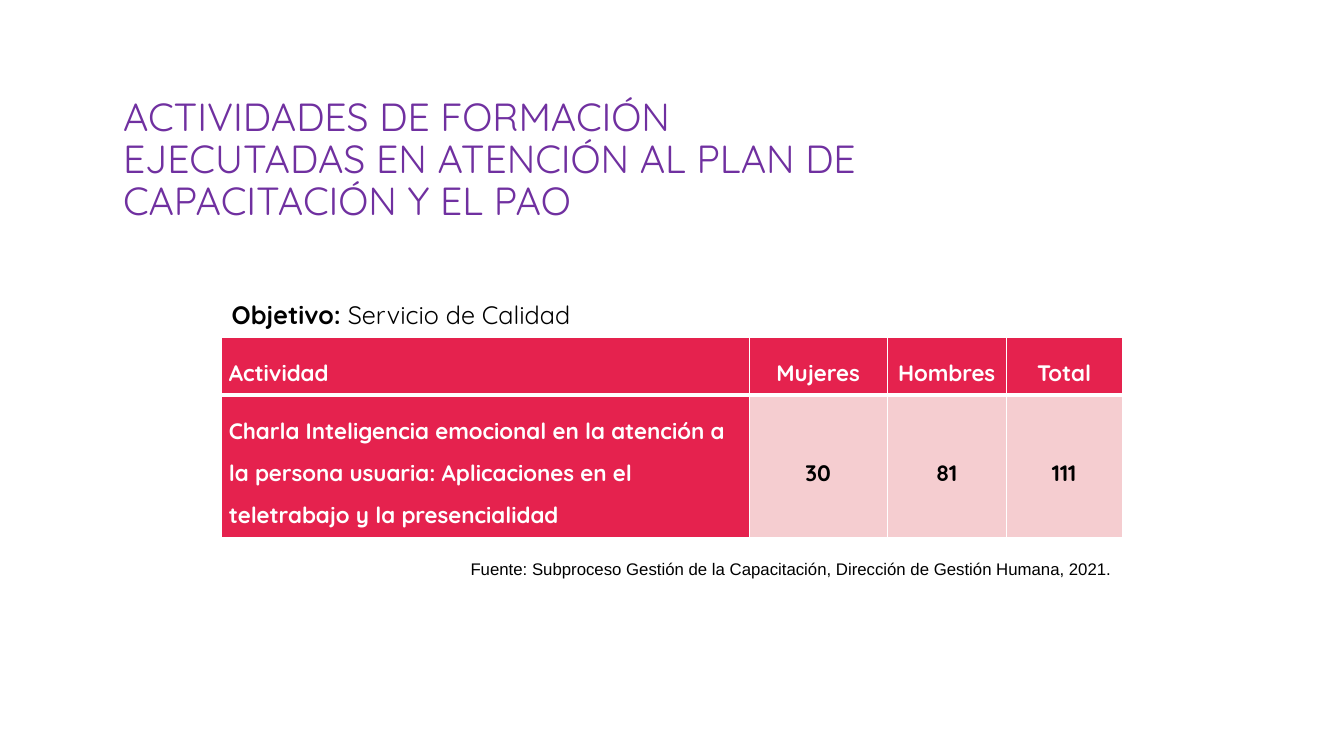
from dataclasses import dataclass

from lxml import etree
from pptx import Presentation
from pptx.dml.color import RGBColor
from pptx.enum.text import MSO_ANCHOR, MSO_AUTO_SIZE, PP_ALIGN
from pptx.oxml.ns import qn
from pptx.util import Emu, Pt

LEFT, CENTER, RIGHT = PP_ALIGN.LEFT, PP_ALIGN.CENTER, PP_ALIGN.RIGHT
MIDDLE = MSO_ANCHOR.MIDDLE
NO_FIT, GROW = MSO_AUTO_SIZE.NONE, MSO_AUTO_SIZE.SHAPE_TO_FIT_TEXT

EMU_PER_PX = 9144  # 100 px to the inch
TITLE_ONLY = 5
PURPLE, RED, PINK = "7030A0", "E5224E", "F5CDD0"
WHITE, BLACK = "FFFFFF", "000000"


@dataclass
class Box:
    left: int
    top: int
    width: int
    height: int

    def emu(self) -> list[Emu]:
        return [px(n) for n in (self.left, self.top, self.width, self.height)]


@dataclass
class Column:
    width: int
    heading: str
    value: str
    align: PP_ALIGN = CENTER
    fill: str = PINK
    color: str = BLACK


TITLE_BOX = Box(112, 89, 748, 141)
OBJECTIVE_BOX = Box(220, 292, 790, 40)
TABLE_BOX = Box(220, 335, 893, 198)
SOURCE_BOX = Box(456, 549, 657, 30)

ROW_HEIGHTS = (57, 141)
COLUMNS = [
    Column(523, "Actividad",
           "Charla Inteligencia emocional en la atención a la persona usuaria: "
           "Aplicaciones en el teletrabajo y la presencialidad",
           LEFT, RED, WHITE),
    Column(137, "Mujeres", "30"),
    Column(118, "Hombres", "81"),
    Column(115, "Total", "111"),
]


def px(n: int) -> Emu:
    return Emu(n * EMU_PER_PX)


def rgb(color: str) -> RGBColor:
    return RGBColor.from_string(color)


def write(tf, text: str, *, size: int, color: str, font: str = "Quicksand",
          bold: bool = False, align: PP_ALIGN = LEFT, spacing: float = 1.0) -> None:
    """Append a run to the first paragraph and format both."""
    p = tf.paragraphs[0]
    p.alignment, p.line_spacing = align, spacing
    r = p.add_run()
    r.text = text
    r.font.name, r.font.size, r.font.bold = font, Pt(size), bold
    r.font.color.rgb = rgb(color)


def add_text_box(s, box: Box):
    tf = s.shapes.add_textbox(*box.emu()).text_frame
    tf.word_wrap, tf.auto_size = True, GROW
    return tf


def set_borders(cell, **widths: int) -> None:
    tc_pr = cell._tc.get_or_add_tcPr()
    for side, width in widths.items():
        ln = etree.SubElement(tc_pr, qn(f"a:ln{side}"), w=str(Pt(width)))
        fill = etree.SubElement(ln, qn("a:solidFill"))
        etree.SubElement(fill, qn("a:srgbClr"), val=WHITE)


def fill_cell(cell, text: str, fill: str, color: str, align: PP_ALIGN) -> None:
    cell.margin_left = cell.margin_right = px(7)
    cell.margin_top = cell.margin_bottom = 0
    cell.vertical_anchor = MIDDLE
    cell.fill.solid()
    cell.fill.fore_color.rgb = rgb(fill)
    write(cell.text_frame, text, size=16, color=color, bold=True,
          align=align, spacing=1.5)


def add_activity_table(s) -> None:
    table = s.shapes.add_table(len(ROW_HEIGHTS), len(COLUMNS), *TABLE_BOX.emu()).table
    for row, height in zip(table.rows, ROW_HEIGHTS):
        row.height = px(height)
    for i, column in enumerate(COLUMNS):
        table.columns[i].width = px(column.width)
        head, body = table.cell(0, i), table.cell(1, i)
        # A thick rule parts the heading from the body
        set_borders(head, L=1, R=1, T=1, B=3)
        set_borders(body, L=1, R=1, T=3, B=1)
        fill_cell(head, column.heading, RED, WHITE, column.align)
        fill_cell(body, column.value, column.fill, column.color, column.align)


def main() -> None:
    prs = Presentation()
    prs.slide_width, prs.slide_height = px(1333), px(750)
    s = prs.slides.add_slide(prs.slide_layouts[TITLE_ONLY])

    # Title
    title = s.shapes.title
    title.left, title.top, title.width, title.height = TITLE_BOX.emu()
    tf = title.text_frame
    tf.word_wrap, tf.auto_size, tf.vertical_anchor = True, NO_FIT, MIDDLE
    write(tf, "ACTIVIDADES DE FORMACIÓN EJECUTADAS EN ATENCIÓN AL PLAN DE "
          "CAPACITACIÓN Y EL PAO", size=28, color=PURPLE, spacing=0.9)

    # Objective
    tf = add_text_box(s, OBJECTIVE_BOX)
    write(tf, "Objetivo: ", size=18, color=BLACK, bold=True)
    write(tf, "Servicio de Calidad", size=18, color=BLACK)

    # Table and its source
    add_activity_table(s)
    write(add_text_box(s, SOURCE_BOX),
          "Fuente: Subproceso Gestión de la Capacitación, "
          "Dirección de Gestión Humana, 2021.",
          size=12, color=BLACK, font="Arial", align=RIGHT)

    prs.save("out.pptx")


if __name__ == "__main__":
    main()
